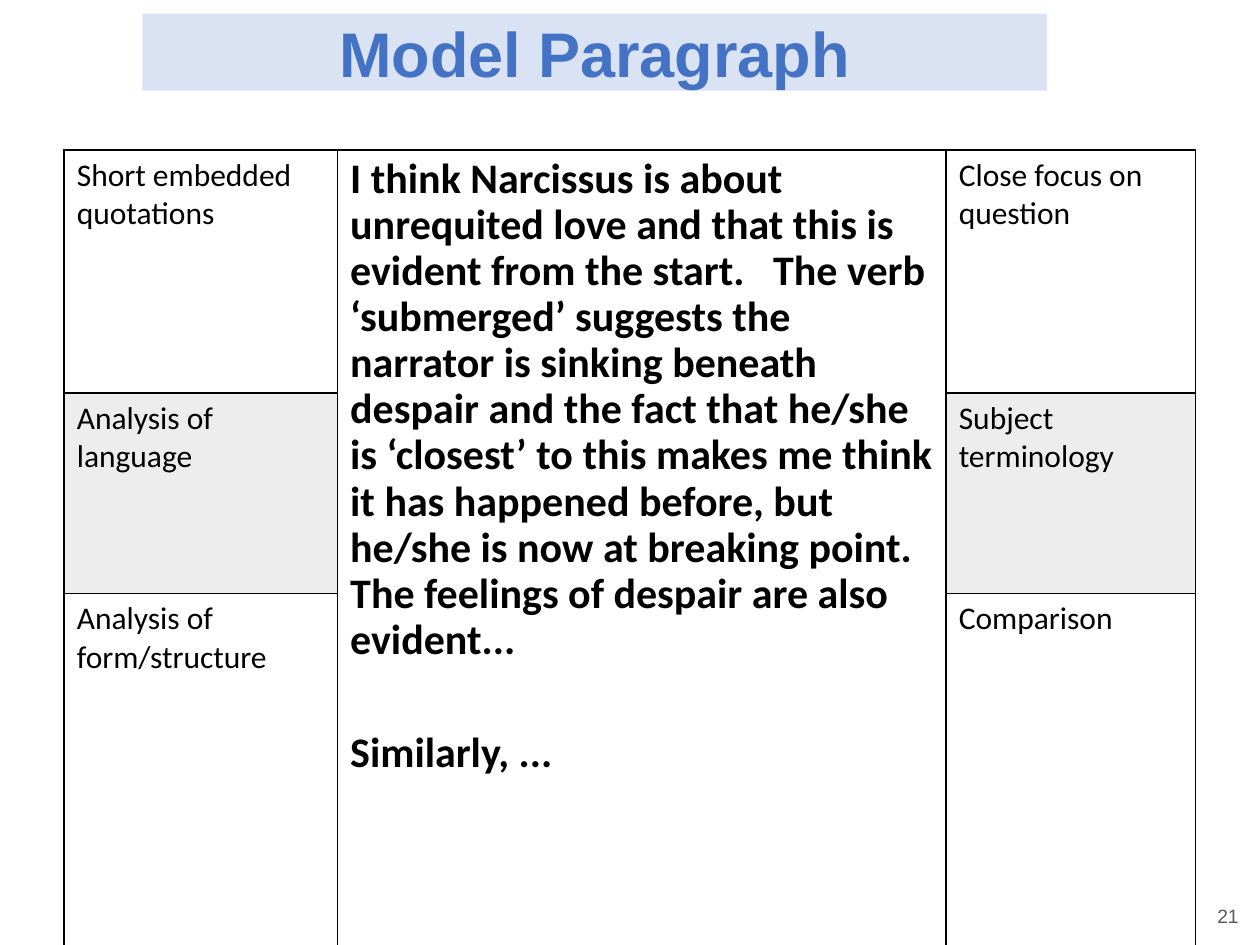
from lxml.etree import SubElement
from pptx import Presentation
from pptx.dml.color import RGBColor
from pptx.enum.text import MSO_ANCHOR as Anchor, MSO_AUTO_SIZE as AutoSize, PP_ALIGN as Align
from pptx.oxml.ns import qn
from pptx.util import Inches, Pt

BLACK = RGBColor(0x00, 0x00, 0x00)
BLUE = RGBColor(0x44, 0x72, 0xC4)
PALE_BLUE = RGBColor(0xDA, 0xE3, 0xF3)
PALE_GREY = RGBColor(0xED, 0xED, 0xED)
DARK_GREY = RGBColor(0x59, 0x59, 0x59)


def write(paragraph, text, size=18, font="Calibri", color=BLACK, bold=False,
          align=Align.LEFT, line=1.0, before=0, after=0):
    run = paragraph.add_run()
    run.text = text
    run.font.size = Pt(size)
    run.font.name = font
    run.font.bold = bold
    run.font.color.rgb = color
    paragraph.alignment = align
    paragraph.line_spacing = line
    paragraph.space_before = Pt(before)
    paragraph.space_after = Pt(after)


def add_borders(cell):
    properties = cell._tc.get_or_add_tcPr()
    for position, side in enumerate(("lnL", "lnR", "lnT", "lnB")):
        border = SubElement(properties, qn(f"a:{side}"), w=str(Pt(1)))
        fill = SubElement(border, qn("a:solidFill"))
        SubElement(fill, qn("a:srgbClr"), val=str(BLACK))
        properties.insert(position, border)


deck = Presentation()
deck.slide_width, deck.slide_height = Inches(10), Inches(7.5)
W, H = deck.slide_width, deck.slide_height
slide = deck.slides.add_slide(deck.slide_layouts[5])

heading = slide.shapes.title
heading.left, heading.top = Inches(1.13), Inches(0.11)
heading.width, heading.height = Inches(7.18), Inches(0.61)
heading.fill.solid()
heading.fill.fore_color.rgb = PALE_BLUE
heading_frame = heading.text_frame
heading_frame.margin_left = heading_frame.margin_right = 0
heading_frame.margin_top = heading_frame.margin_bottom = 0
heading_frame.vertical_anchor = Anchor.MIDDLE
heading_frame.auto_size = AutoSize.NONE
write(heading_frame.paragraphs[0], "Model Paragraph", size=36, font="Arial",
      color=BLUE, bold=True, align=Align.CENTER)

column_widths = [2.17, 4.83, 1.98]
row_heights = [1.93, 1.59, 2.86]
skills = [
    ("Short embedded quotations", "Close focus on question"),
    ("Analysis of language", "Subject terminology"),
    ("Analysis of form/structure", "Comparison"),
]
model_answer = (
    "I think Narcissus is about unrequited love and that this is evident from the start.   "
    "The verb ‘submerged’ suggests the narrator is sinking beneath despair and the fact that "
    "he/she is ‘closest’ to this makes me think it has happened before, but he/she is now at "
    "breaking point.   The feelings of despair are also evident..."
)

grid = slide.shapes.add_table(
    len(row_heights), len(column_widths), Inches(0.51), Inches(1.19),
    Inches(sum(column_widths)), Inches(sum(row_heights))).table
for column, width in zip(grid.columns, column_widths):
    column.width = Inches(width)
for row, height in zip(grid.rows, row_heights):
    row.height = Inches(height)
grid.cell(0, 1).merge(grid.cell(2, 1))

for row_index, row in enumerate(grid.rows):
    for column_index, cell in enumerate(row.cells):
        if row_index == 1 and column_index != 1:
            cell.fill.solid()
            cell.fill.fore_color.rgb = PALE_GREY
        else:
            cell.fill.background()
        add_borders(cell)
    for column_index, skill in zip((0, 2), skills[row_index]):
        write(grid.cell(row_index, column_index).text_frame.paragraphs[0], skill)

answer_frame = grid.cell(0, 1).text_frame
write(answer_frame.paragraphs[0], model_answer, size=24, bold=True, line=0.9, after=6)
write(answer_frame.add_paragraph(), "Similarly, ...", size=24, bold=True, line=0.9,
      before=32, after=6)

page_number = slide.shapes.add_textbox(
    int(W * 0.952), int(H * 0.95), int(W * 0.041), int(H * 0.04)).text_frame
page_number.margin_right = Inches(0.1)
page_number.word_wrap = False
write(page_number.paragraphs[0], "21", size=11, font="Arial", color=DARK_GREY,
      align=Align.RIGHT)

deck.save("out.pptx")
